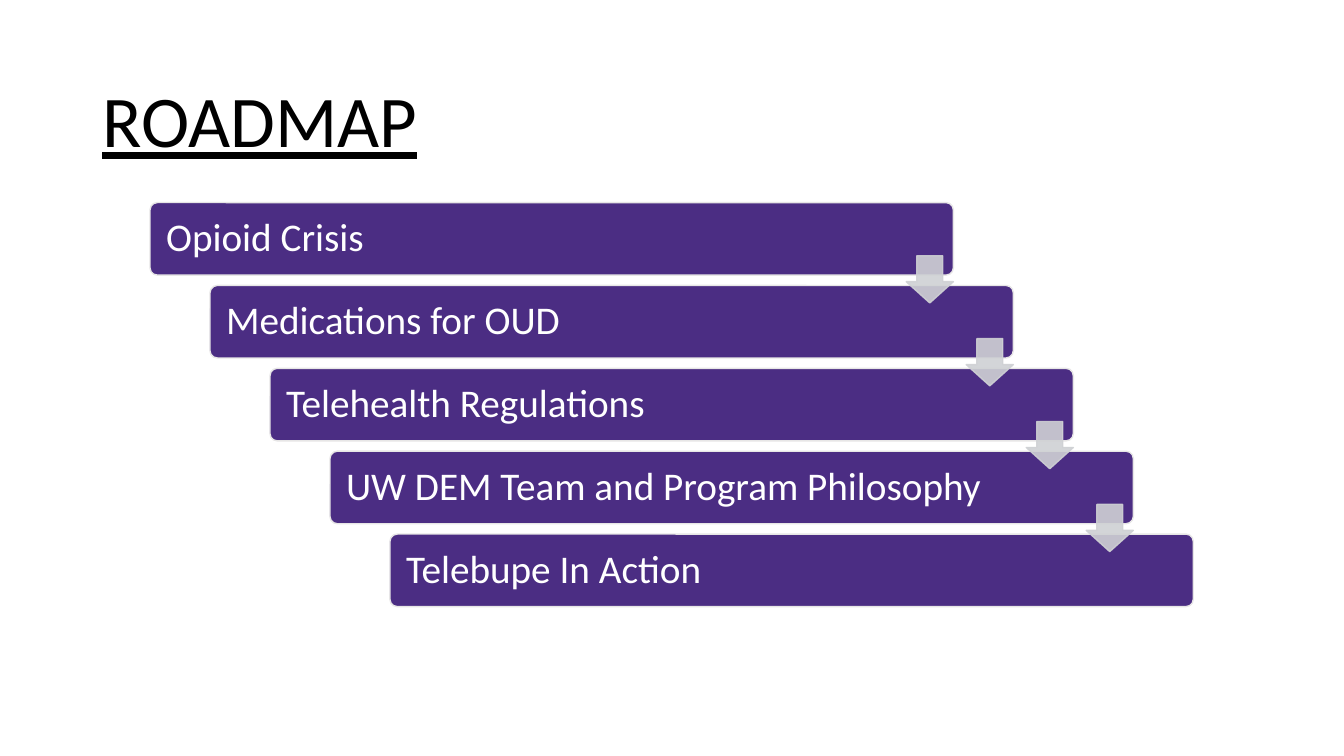
import pptx
import pptx.dml.color
import pptx.enum.shapes
import pptx.enum.text
import pptx.oxml
import pptx.oxml.ns
import pptx.util
from lxml import etree

Pt = pptx.util.Pt
SHAPES = pptx.enum.shapes.MSO_SHAPE
COLOURS = {"title": "000000", "bar": "4B2D83", "bar edge": "E7E6E6",
           "label": "FFFFFF", "arrow": "CFD1D4"}
STEPS = ["Opioid Crisis", "Medications for OUD", "Telehealth Regulations",
         "UW DEM Team and Program Philosophy", "Telebupe In Action"]
BAR_LEFT, BAR_TOP, BAR_WIDTH, BAR_HEIGHT = 107.2, 144.7, 573.8, 51.8
STEP_RIGHT, STEP_DOWN = 42.85, 59.2
ARROW_SIZE = 33.7
ARROW_DROP = 38


def colour(name):
    return pptx.dml.color.RGBColor.from_string(COLOURS[name])


def write(box, text, size, colour_name, underline=None):
    """Put one left-aligned line in the vertical middle of a box."""
    frame = box.text_frame
    frame.word_wrap = True
    frame.vertical_anchor = pptx.enum.text.MSO_ANCHOR.MIDDLE
    para = frame.paragraphs[0]
    para.alignment = pptx.enum.text.PP_ALIGN.LEFT
    para.line_spacing = 0.9
    span = para.add_run()
    span.text = text
    span.font.name = "Calibri"
    span.font.size = Pt(size)
    span.font.color.rgb = colour(colour_name)
    span.font.underline = underline
    return para


def add_title(page, text):
    box = page.shapes.add_textbox(Pt(66), Pt(44), Pt(828), Pt(89.5))
    write(box, text, 52, "title", underline=True).space_after = Pt(6)


def add_shape(page, kind, left, top, width, height, fill, edge):
    shape = page.shapes.add_shape(kind, Pt(left), Pt(top), Pt(width), Pt(height))
    shape.shadow.inherit = False
    shape.fill.solid()
    shape.fill.fore_color.rgb = colour(fill)
    shape.line.color.rgb = colour(edge)
    shape.line.width = Pt(1)
    return shape


def add_bar(page, left, top, text):
    bar = add_shape(page, SHAPES.ROUNDED_RECTANGLE, left, top,
                    BAR_WIDTH, BAR_HEIGHT, "bar", "bar edge")
    bar.adjustments[0] = 0.1
    frame = bar.text_frame
    frame.margin_left = frame.margin_right = Pt(10)
    write(bar, text, 28, "label")


def add_arrow(page, left, top):
    arrow = add_shape(page, SHAPES.DOWN_ARROW, left, top,
                      ARROW_SIZE, ARROW_SIZE, "arrow", "arrow")
    arrow.adjustments[0] = 0.55
    arrow.adjustments[1] = 0.45
    qualified = pptx.oxml.ns.qn
    for tint in arrow.element.spPr.iter(qualified("a:srgbClr")):
        etree.SubElement(tint, qualified("a:alpha"), val="90000")


def main():
    deck = pptx.Presentation()
    deck.slide_width, deck.slide_height = Pt(960), Pt(540)
    page = deck.slides.add_slide(deck.slide_layouts[6])
    add_title(page, "ROADMAP")
    corners = [(BAR_LEFT + STEP_RIGHT * index, BAR_TOP + STEP_DOWN * index)
               for index in range(len(STEPS))]
    for (left, top), text in zip(corners, STEPS):
        add_bar(page, left, top, text)
    for left, top in corners[:-1]:
        add_arrow(page, left + BAR_WIDTH - ARROW_SIZE, top + ARROW_DROP)
    deck.save("out.pptx")


if __name__ == "__main__":
    main()
